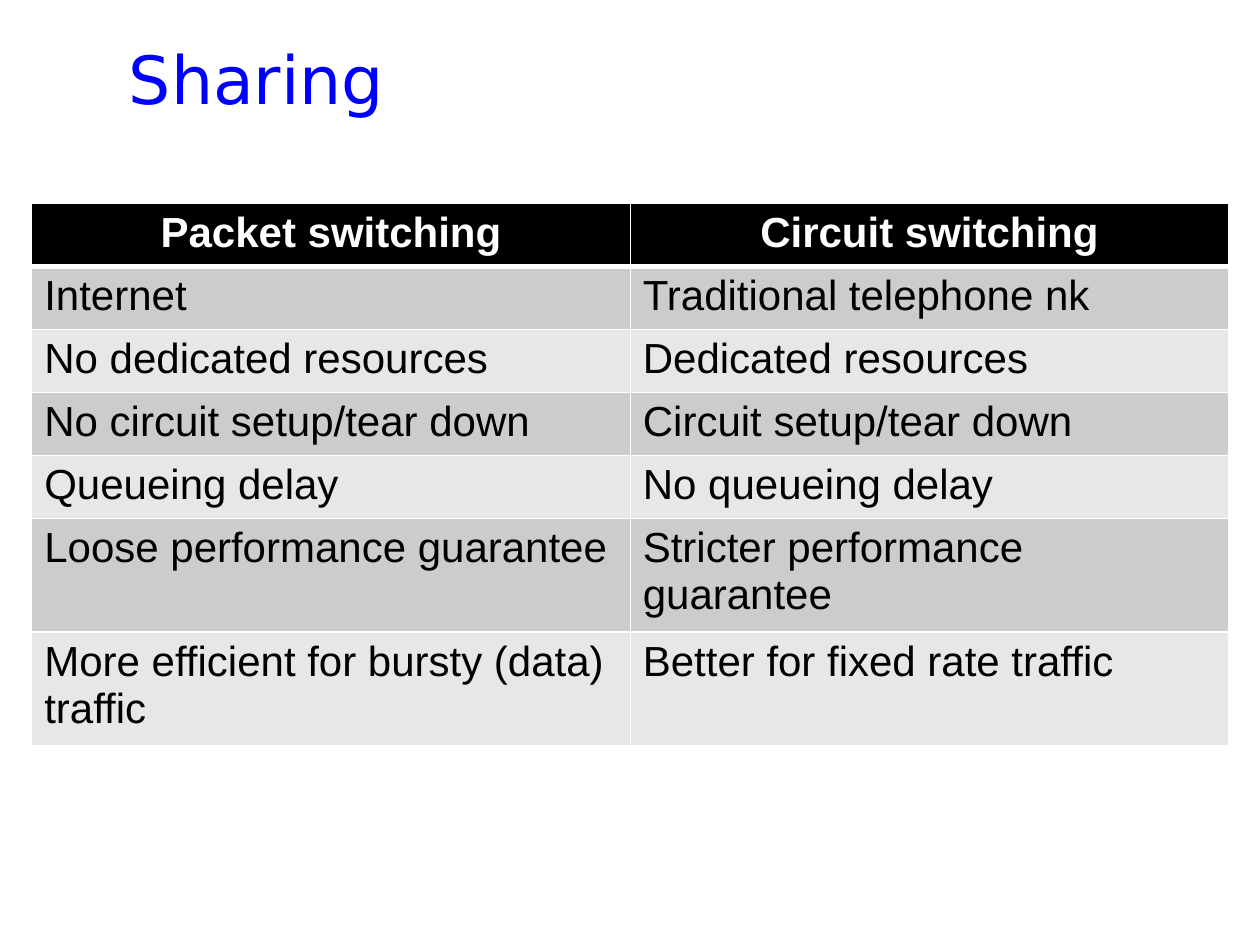
from lxml import etree
from pptx import Presentation
from pptx.dml.color import RGBColor
from pptx.enum.text import MSO_ANCHOR, PP_ALIGN
from pptx.oxml.ns import qn
from pptx.util import Cm, Pt

TOP = MSO_ANCHOR.TOP
LEFT, CENTER = PP_ALIGN.LEFT, PP_ALIGN.CENTER

COLORS = {
    "title": "0000FF",
    "head": "000000",
    "head_text": "FFFFFF",
    "text": "000000",
    "odd": "CCCCCC",
    "even": "E7E7E7",
    "rule": "FFFFFF",
}

ONE, TWO = 1.2, 2.14  # heights of rows with one and two lines

ROWS = [
    (ONE, "Packet switching", "Circuit switching"),
    (ONE, "Internet", "Traditional telephone nk"),
    (ONE, "No dedicated resources", "Dedicated resources"),
    (ONE, "No circuit setup/tear down", "Circuit setup/tear down"),
    (ONE, "Queueing delay", "No queueing delay"),
    (TWO, "Loose performance guarantee", "Stricter performance guarantee"),
    (TWO, "More efficient for bursty (data) traffic", "Better for fixed rate traffic"),
]


class Deck:
    """Holds the style and the current slide."""

    title_font, title_size = "DejaVu Sans", 38
    body_font, body_size = "Arial", 24

    def __init__(self, slide):
        self.slide = slide

    def color(self, name):
        return RGBColor.from_string(COLORS[name])

    def style(self, para, face, size, color, bold=False, align=LEFT):
        para.alignment = align
        for run in para.runs:
            font = run.font
            font.name, font.size, font.bold = face, Pt(size), bold
            font.color.rgb = self.color(color)

    def title(self, text, left, top, width, height):
        box = self.slide.shapes.add_textbox(Cm(left), Cm(top), Cm(width), Cm(height))
        frame = box.text_frame
        frame.word_wrap = True
        frame.vertical_anchor = TOP
        frame.text = text
        self.style(frame.paragraphs[0], self.title_font, self.title_size, "title")

    def rules(self, cell, above, below):
        """Rule all four sides of a cell; call before the cell is filled."""
        props = cell._tc.get_or_add_tcPr()
        for side, width in (("L", 1), ("R", 1), ("T", above), ("B", below)):
            line = etree.SubElement(props, qn(f"a:ln{side}"), w=str(Pt(width)))
            fill = etree.SubElement(line, qn("a:solidFill"))
            etree.SubElement(fill, qn("a:srgbClr"), val=COLORS["rule"])

    def table(self, rows, left, top, width):
        """Add a table with a dark head and banded rows."""
        total = sum(row[0] for row in rows)
        table = self.slide.shapes.add_table(
            len(rows), len(rows[0]) - 1, Cm(left), Cm(top),
            Cm(width), Cm(total)).table
        for i, (height, *texts) in enumerate(rows):
            table.rows[i].height = Cm(height)
            head = i == 0
            fill = "head" if head else "odd" if i % 2 else "even"
            for j, text in enumerate(texts):
                cell = table.cell(i, j)
                self.rules(cell, 3 if i == 1 else 1, 3 if head else 1)
                cell.fill.solid()
                cell.fill.fore_color.rgb = self.color(fill)
                cell.text_frame.text = text
                self.style(cell.text_frame.paragraphs[0],
                           self.body_font, self.body_size,
                           "head_text" if head else "text",
                           bold=head, align=CENTER if head else LEFT)


def main():
    prs = Presentation()
    prs.slide_width, prs.slide_height = Cm(25.4), Cm(19.05)
    deck = Deck(prs.slides.add_slide(prs.slide_layouts[6]))
    deck.title("Sharing", 2.35, 0.64, 22.4, 2.33)
    deck.table(ROWS, 0.64, 4.1, 24.13)
    prs.save("out.pptx")


if __name__ == "__main__":
    main()
